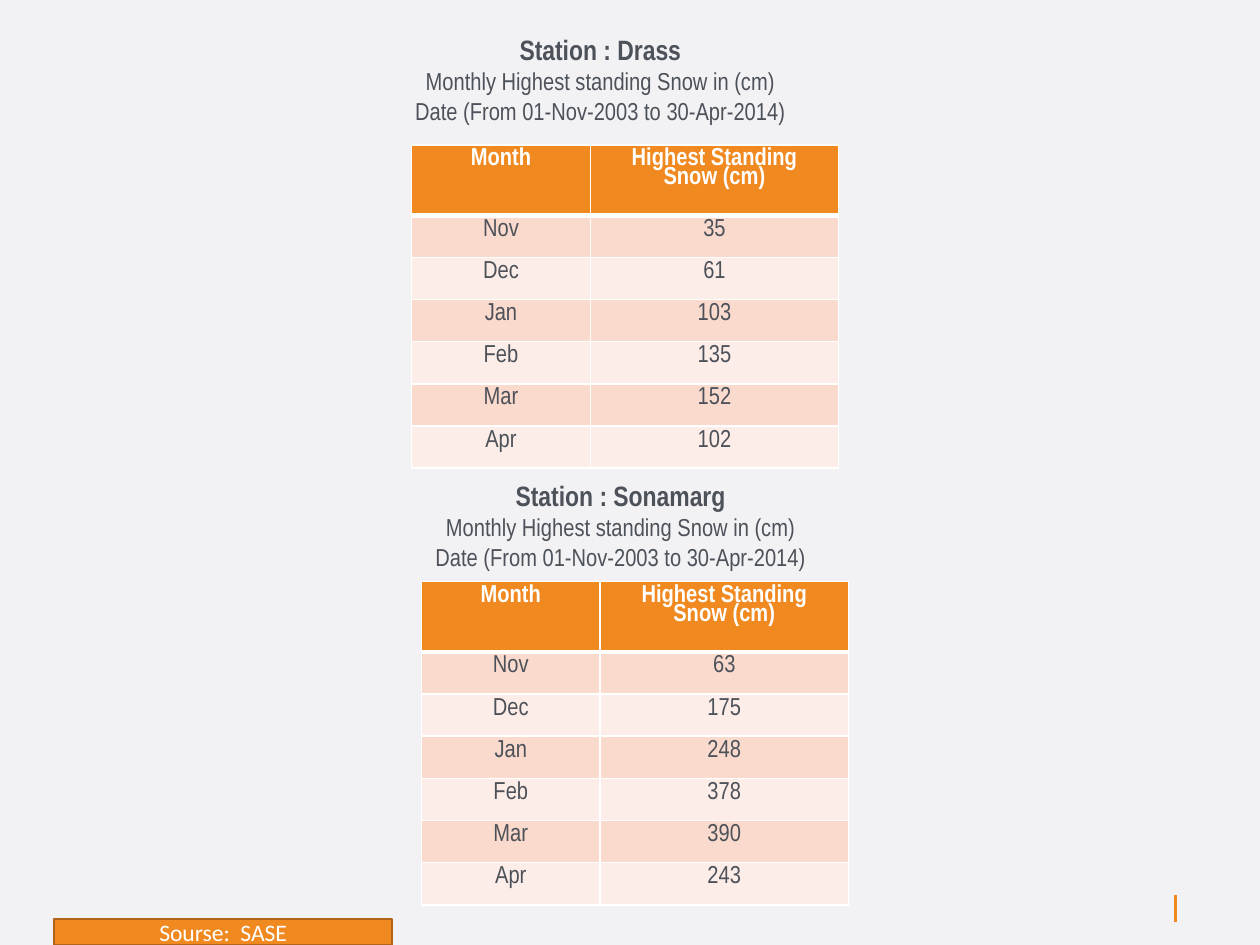
from dataclasses import dataclass

from lxml.etree import SubElement
from pptx import Presentation
from pptx.dml.color import RGBColor
from pptx.enum.shapes import MSO_CONNECTOR, MSO_SHAPE
from pptx.enum.text import MSO_ANCHOR, PP_ALIGN
from pptx.oxml.ns import qn
from pptx.util import Pt


@dataclass(frozen=True)
class Theme:
    background: str = "F2F2F5"
    accent: str = "F08920"
    accent_dark: str = "B26518"
    ink: str = "4D5159"
    white: str = "FFFFFF"
    bands: tuple = ("F9DACD", "FCEDE8")
    narrow: str = "Arial Narrow"
    plain: str = "Calibri"
    station_size: float = 16
    body_size: float = 14
    source_size: float = 13.5


THEME = Theme()
MONTHS = ("Nov", "Dec", "Jan", "Feb", "Mar", "Apr")
HEADINGS = ("Month", "Highest Standing Snow (cm)")
COLUMN_WIDTHS = (102.2, 141.8)
HEADER_HEIGHT, ROW_HEIGHT = 40.2, 24.1
# name, heading (left, top, width), table (left, top), snow per month
STATIONS = (
    ("Drass", (99.4, 15.1, 487.4), (235.2, 82.8), (35, 61, 103, 135, 152, 102)),
    ("Sonamarg", (99.4, 270, 510.5), (240.8, 332.3), (63, 175, 248, 378, 390, 243)),
)


def paint(fill, color):
    fill.solid()
    fill.fore_color.rgb = RGBColor.from_string(color)


def write(paragraph, text, *, size=THEME.body_size, color=THEME.ink,
          bold=False, font=THEME.narrow, spacing=None):
    paragraph.alignment = PP_ALIGN.CENTER
    paragraph.line_spacing = spacing
    run = paragraph.add_run()
    run.text = text
    run.font.name = font
    run.font.size = Pt(size)
    run.font.bold = bold
    run.font.color.rgb = RGBColor.from_string(color)


def add_heading(slide, station, left, top, width):
    box = slide.shapes.add_textbox(Pt(left), Pt(top), Pt(width), Pt(60.5))
    frame = box.text_frame
    frame.word_wrap = True
    write(frame.paragraphs[0], f"Station : {station}",
          size=THEME.station_size, bold=True)
    for line in ("Monthly Highest standing Snow in (cm)",
                 "Date (From 01-Nov-2003 to 30-Apr-2014)"):
        write(frame.add_paragraph(), line)


def set_borders(cell, **widths):
    """Draw white borders; widths are given by side tag (lnL, lnR, lnT, lnB)."""
    properties = cell._tc.get_or_add_tcPr()
    for position, (side, width) in enumerate(widths.items()):
        line = SubElement(properties, qn(f"a:{side}"), w=str(Pt(width)))
        fill = SubElement(line, qn("a:solidFill"))
        SubElement(fill, qn("a:srgbClr"), val=THEME.white)
        properties.insert(position, line)


def add_snow_table(slide, snow, left, top):
    rows = [HEADINGS, *zip(MONTHS, map(str, snow))]
    height = HEADER_HEIGHT + ROW_HEIGHT * len(MONTHS)
    table = slide.shapes.add_table(
        len(rows), len(HEADINGS), Pt(left), Pt(top),
        Pt(sum(COLUMN_WIDTHS)), Pt(height)).table
    for column, width in zip(table.columns, COLUMN_WIDTHS):
        column.width = Pt(width)
    for index, values in enumerate(rows):
        is_header = index == 0
        table.rows[index].height = Pt(HEADER_HEIGHT if is_header else ROW_HEIGHT)
        for column, value in enumerate(values):
            cell = table.cell(index, column)
            paint(cell.fill, THEME.accent if is_header else THEME.bands[(index - 1) % 2])
            set_borders(cell, lnL=1, lnR=1, lnT=3 if index == 1 else 1,
                        lnB=3 if is_header else 1)
            write(cell.text_frame.paragraphs[0], value, bold=is_header, spacing=0.8,
                  color=THEME.white if is_header else THEME.ink)


def add_source(slide, text):
    bar = slide.shapes.add_shape(
        MSO_SHAPE.RECTANGLE, Pt(31), Pt(525), Pt(193), Pt(15))
    bar.shadow.inherit = False
    paint(bar.fill, THEME.accent)
    paint(bar.line.fill, THEME.accent_dark)
    bar.line.width = Pt(1)
    bar.text_frame.vertical_anchor = MSO_ANCHOR.MIDDLE
    write(bar.text_frame.paragraphs[0], text, size=THEME.source_size,
          color=THEME.white, font=THEME.plain)


def add_footer_rule(slide):
    rule = slide.shapes.add_connector(
        MSO_CONNECTOR.STRAIGHT, Pt(671.8), Pt(511.2), Pt(671.8), Pt(527))
    paint(rule.line.fill, THEME.accent)
    rule.line.width = Pt(1.5)
    SubElement(rule._element.spPr, qn("a:effectLst"))


def main():
    deck = Presentation()
    deck.slide_width, deck.slide_height = Pt(720), Pt(540)
    slide = deck.slides.add_slide(deck.slide_layouts[6])
    paint(slide.background.fill, THEME.background)
    add_footer_rule(slide)
    for station, heading_place, table_place, snow in STATIONS:
        add_heading(slide, station, *heading_place)
        add_snow_table(slide, snow, *table_place)
    add_source(slide, "Sourse:  SASE")
    deck.save("out.pptx")


if __name__ == "__main__":
    main()
